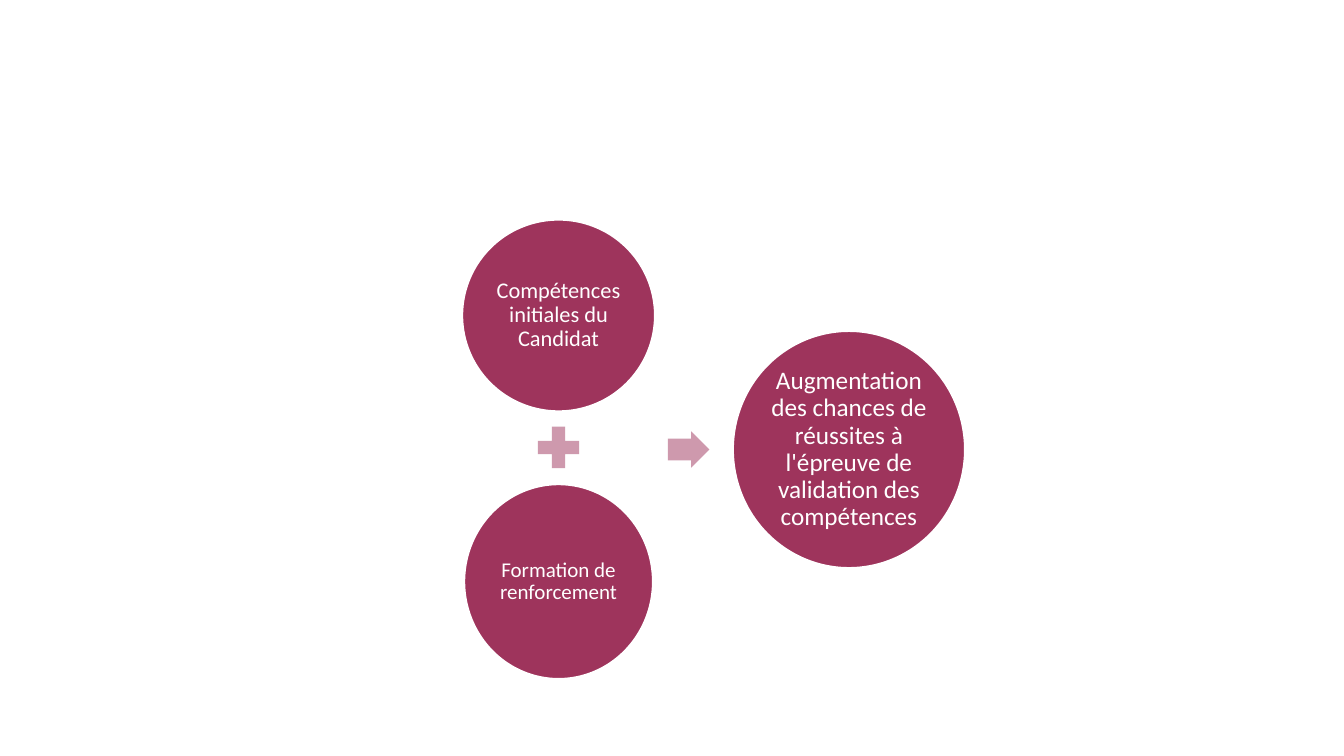
import pptx
import pptx.dml.color
import pptx.enum.shapes
import pptx.enum.text
import pptx.oxml
import pptx.oxml.ns
import pptx.util
from pptx.util import Inches

COLORS = {"plum": "9E345C", "white": "FFFFFF"}
FONT = "Calibri"
SHAPES = pptx.enum.shapes.MSO_SHAPE

# Circles: text, center x, center y, width, height, font size, inset
CIRCLES = [
    ("Compétences initiales du Candidat", 5.54, 3.13, 1.92, 1.91, 16, 0.02),
    ("Formation de renforcement", 5.54, 5.77, 1.88, 1.94, 15, 0.02),
    ("Augmentation des chances de réussites à l'épreuve de validation des compétences",
     8.42, 4.46, 2.31, 2.36, 18, 0.03),
]
# Operators: shape, center x, center y, width, height, adjustments
OPERATORS = [
    (SHAPES.MATH_PLUS, 5.54, 4.44, 0.56, 0.56, []),
    (SHAPES.RIGHT_ARROW, 6.83, 4.46, 0.41, 0.36, [0.6, 0.5]),
]
OPERATOR_ALPHA = 50


def rgb(name):
    return pptx.dml.color.RGBColor.from_string(COLORS[name])


def add_centered(page, kind, center_x, center_y, width, height):
    shape = page.shapes.add_shape(
        kind, Inches(center_x - width / 2), Inches(center_y - height / 2),
        Inches(width), Inches(height))
    shape.shadow.inherit = False
    shape.fill.solid()
    shape.fill.fore_color.rgb = rgb("plum")
    return shape


def add_circle(page, text, center_x, center_y, width, height, size, inset):
    circle = add_centered(page, SHAPES.OVAL, center_x, center_y, width, height)
    circle.line.color.rgb = rgb("white")
    circle.line.width = pptx.util.Pt(2)

    frame = circle.text_frame
    frame.word_wrap = True
    frame.vertical_anchor = pptx.enum.text.MSO_ANCHOR.MIDDLE
    frame.margin_left = frame.margin_right = Inches(inset)
    frame.margin_top = frame.margin_bottom = Inches(inset)

    para = frame.paragraphs[0]
    para.text = text
    para.alignment = pptx.enum.text.PP_ALIGN.CENTER
    para.line_spacing = 0.9
    para.font.name = FONT
    para.font.size = pptx.util.Pt(size)
    para.font.color.rgb = rgb("white")


def add_operator(page, kind, center_x, center_y, width, height, adjustments):
    operator = add_centered(page, kind, center_x, center_y, width, height)
    operator.line.fill.background()
    for index, value in enumerate(adjustments):
        operator.adjustments[index] = value
    # Transparency of the fill
    color = operator.fill._xPr.find(".//" + pptx.oxml.ns.qn("a:srgbClr"))
    color.append(pptx.oxml.parse_xml(
        f'<a:alpha {pptx.oxml.ns.nsdecls("a")} val="{OPERATOR_ALPHA * 1000}"/>'))


def main():
    deck = pptx.Presentation()
    deck.slide_width = Inches(13.33)
    deck.slide_height = Inches(7.5)
    page = deck.slides.add_slide(deck.slide_layouts[6])

    # Equation: two circles lead to the result
    for circle in CIRCLES:
        add_circle(page, *circle)
    for operator in OPERATORS:
        add_operator(page, *operator)

    deck.save("out.pptx")


if __name__ == "__main__":
    main()
